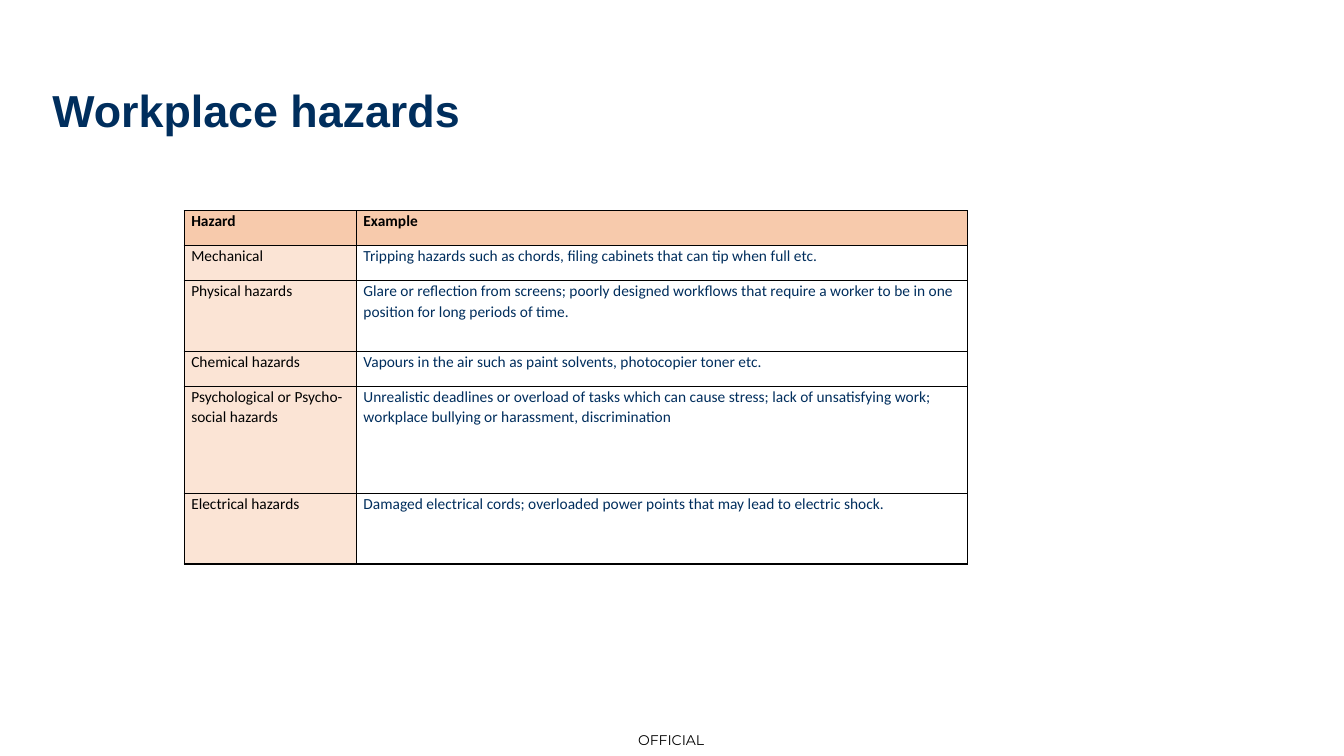
import lxml.etree
import pptx
import pptx.dml.color
import pptx.enum.text
import pptx.oxml.ns
import pptx.util

Cm = pptx.util.Cm
NAVY, BLACK = "002E5D", "000000"
HEADER_FILL, HAZARD_FILL = "F7CAAC", "FBE4D5"
HAZARDS = [
    ("Hazard", "Example", 0.88),
    ("Mechanical", "Tripping hazards such as chords, filing cabinets that can tip when full etc.", 0.88),
    ("Physical hazards", "Glare or reflection from screens; poorly designed workflows that require "
     "a worker to be in one position for long periods of time.", 1.78),
    ("Chemical hazards", "Vapours in the air such as paint solvents, photocopier toner etc.", 0.88),
    ("Psychological or Psycho-social hazards", "Unrealistic deadlines or overload of tasks which can "
     "cause stress; lack of unsatisfying work; workplace bullying or harassment, discrimination", 2.7),
    ("Electrical hazards", "Damaged electrical cords; overloaded power points that may lead to "
     "electric shock.", 1.78),
]


def color(value):
    return pptx.dml.color.RGBColor.from_string(value)


def write_text(frame, text, font="Calibri", size=11, fill=BLACK, bold=False,
               align=pptx.enum.text.PP_ALIGN.LEFT, line_spacing=1.0, space_after=0):
    frame.word_wrap = True
    paragraph = frame.paragraphs[0]
    paragraph.alignment = align
    paragraph.line_spacing = line_spacing
    paragraph.space_after = pptx.util.Pt(space_after)
    run = paragraph.add_run()
    run.text = text
    run.font.name = font
    run.font.size = pptx.util.Pt(size)
    run.font.bold = bold
    run.font.color.rgb = color(fill)


class HazardSlide:
    """Hold the slide and its table style, and add each kind of element."""

    def __init__(self, presentation):
        self.slide = presentation.slides.add_slide(presentation.slide_layouts[6])
        self.cell_margin = Cm(0.18)
        self.border_width = pptx.util.Pt(1)

    def add_text(self, text, left, top, width, height, margin=None, **text_format):
        shape = self.slide.shapes.add_textbox(Cm(left), Cm(top), Cm(width), Cm(height))
        frame = shape.text_frame
        frame.vertical_anchor = pptx.enum.text.MSO_ANCHOR.MIDDLE
        if margin is not None:
            frame.margin_left = frame.margin_right = Cm(margin)
            frame.margin_top = frame.margin_bottom = Cm(margin)
        write_text(frame, text, **text_format)

    def add_borders(self, cell):
        properties = cell._tc.get_or_add_tcPr()
        qn = pptx.oxml.ns.qn
        for position, side in enumerate(("a:lnL", "a:lnR", "a:lnT", "a:lnB")):
            line = lxml.etree.Element(qn(side), w=str(self.border_width))
            solid = lxml.etree.SubElement(line, qn("a:solidFill"))
            lxml.etree.SubElement(solid, qn("a:srgbClr"), val=BLACK)
            properties.insert(position, line)

    def fill_cell(self, cell, text, background, **text_format):
        cell.margin_left = cell.margin_right = self.cell_margin
        cell.margin_top = cell.margin_bottom = 0
        if background:
            cell.fill.solid()
            cell.fill.fore_color.rgb = color(background)
        else:
            cell.fill.background()
        self.add_borders(cell)
        write_text(cell.text_frame, text, line_spacing=1.07, space_after=8, **text_format)

    def add_hazard_table(self, left, top, column_widths, rows):
        heights = [height for _, _, height in rows]
        table = self.slide.shapes.add_table(
            len(rows), len(column_widths), Cm(left), Cm(top),
            Cm(sum(column_widths)), Cm(sum(heights))).table
        for column, width in zip(table.columns, column_widths):
            column.width = Cm(width)
        for index, (hazard, example, height) in enumerate(rows):
            header = index == 0
            table.rows[index].height = Cm(height)
            self.fill_cell(table.cell(index, 0), hazard,
                           HEADER_FILL if header else HAZARD_FILL, bold=header)
            self.fill_cell(table.cell(index, 1), example, HEADER_FILL if header else None,
                           bold=header, fill=BLACK if header else NAVY)


def main():
    presentation = pptx.Presentation()
    presentation.slide_width = Cm(33.87)
    presentation.slide_height = Cm(19.05)
    hazard_slide = HazardSlide(presentation)
    hazard_slide.add_text("OFFICIAL", 15.62, 18.26, 2.59, 0.79, margin=0, font="Montserrat",
                          size=10, align=pptx.enum.text.PP_ALIGN.CENTER)
    hazard_slide.add_text("Workplace hazards", 1.07, 1.02, 25.32, 3.68, font="Arial",
                          size=32, fill=NAVY, bold=True, line_spacing=0.9)
    hazard_slide.add_hazard_table(4.64, 5.31, (4.34, 15.4), HAZARDS)
    presentation.save("out.pptx")


if __name__ == "__main__":
    main()
